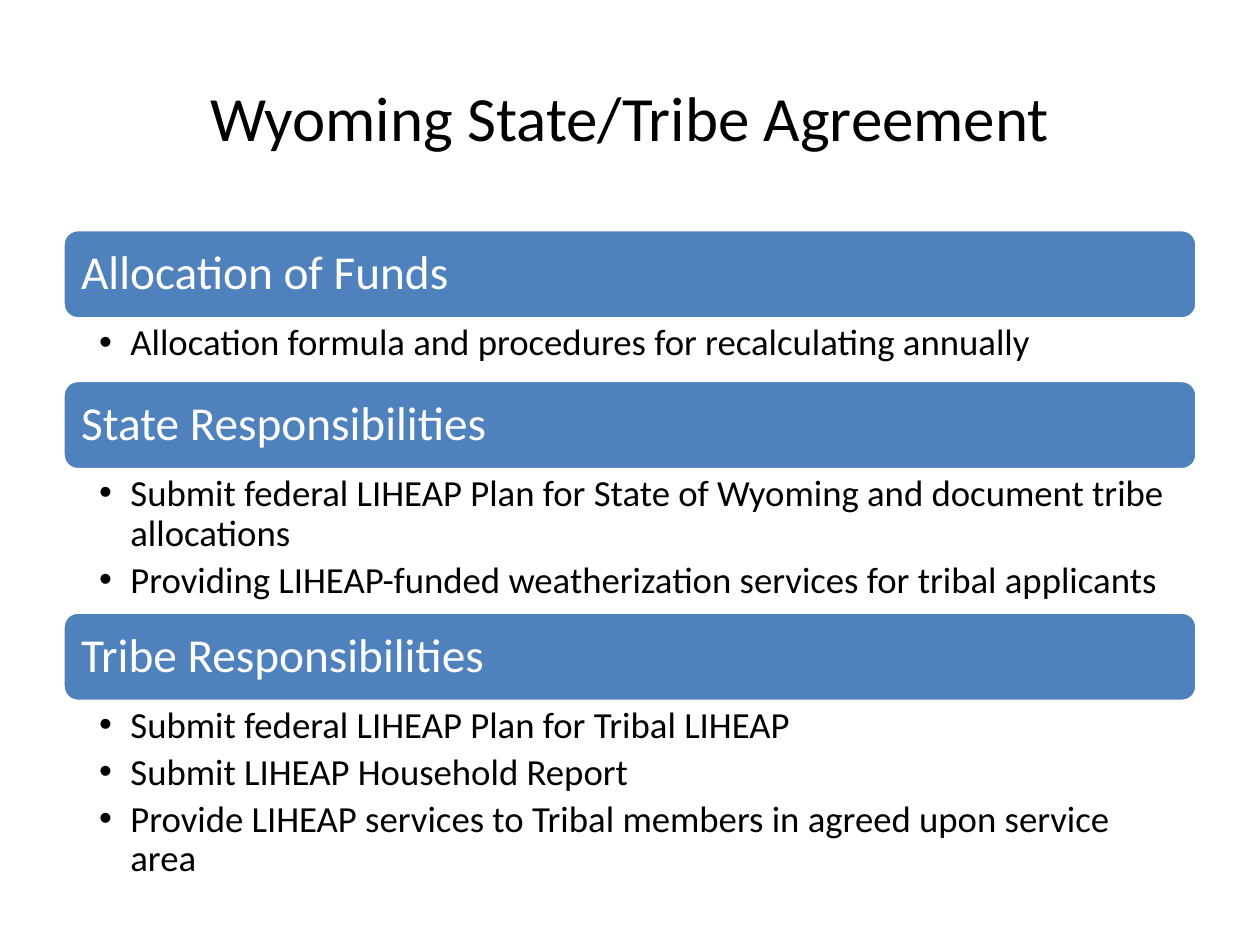
from lxml.etree import SubElement
from pptx import Presentation
from pptx.dml.color import RGBColor
from pptx.enum.shapes import MSO_SHAPE
from pptx.enum.text import MSO_ANCHOR, PP_ALIGN
from pptx.oxml.ns import qn
from pptx.util import Cm, Pt

COLORS = {"page": "FFFFFF", "band": "4F81BD", "light": "FFFFFF", "dark": "000000"}
FONT = "Calibri"
BAND_HEIGHT = 1.8

SECTIONS = [
    ("Allocation of Funds", 1.24, [
        "Allocation formula and procedures for recalculating annually",
    ]),
    ("State Responsibilities", 2.87, [
        "Submit federal LIHEAP Plan for State of Wyoming and document tribe allocations",
        "Providing LIHEAP-funded weatherization services for tribal applicants",
    ]),
    ("Tribe Responsibilities", 3.89, [
        "Submit federal LIHEAP Plan for Tribal LIHEAP",
        "Submit LIHEAP Household Report",
        "Provide LIHEAP services to Tribal members in agreed upon service area",
    ]),
]


def color(name):
    return RGBColor.from_string(COLORS[name])


def format_paragraph(paragraph, size, color_name, align=PP_ALIGN.LEFT):
    paragraph.alignment = align
    for run in paragraph.runs:
        run.font.name = FONT
        run.font.size = Pt(size)
        run.font.color.rgb = color(color_name)


def set_frame(frame, anchor, left, top, right, bottom):
    frame.word_wrap = True
    frame.vertical_anchor = anchor
    frame.margin_left, frame.margin_right = Cm(left), Cm(right)
    frame.margin_top, frame.margin_bottom = Cm(top), Cm(bottom)


def add_bullet(paragraph):
    properties = paragraph._p.get_or_add_pPr()
    properties.set("marL", str(Cm(0.63)))
    properties.set("indent", str(Cm(-0.63)))
    SubElement(properties, qn("a:buFont"), typeface="Arial")
    SubElement(properties, qn("a:buChar"), char="•")


def add_title(slide, left, top, width, height):
    title = slide.shapes.add_textbox(Cm(left), Cm(top), Cm(width), Cm(height))
    frame = title.text_frame
    set_frame(frame, MSO_ANCHOR.MIDDLE, 0.25, 0.13, 0.25, 0.13)
    frame.text = "Wyoming State/Tribe Agreement"
    format_paragraph(frame.paragraphs[0], 36, "dark", PP_ALIGN.CENTER)


def add_band(slide, heading, left, top, width, height):
    band = slide.shapes.add_shape(
        MSO_SHAPE.ROUNDED_RECTANGLE, Cm(left), Cm(top), Cm(width), Cm(height))
    band.shadow.inherit = False
    band.fill.solid()
    band.fill.fore_color.rgb = color("band")
    band.line.color.rgb = color("light")
    band.line.width = Pt(2)
    frame = band.text_frame
    set_frame(frame, MSO_ANCHOR.MIDDLE, 0.28, 0.28, 0.28, 0.28)
    frame.text = heading
    frame.paragraphs[0].line_spacing = 0.9
    format_paragraph(frame.paragraphs[0], 27, "light")


def add_points(slide, points, left, top, width, height):
    body = slide.shapes.add_textbox(Cm(left), Cm(top), Cm(width), Cm(height))
    frame = body.text_frame
    set_frame(frame, MSO_ANCHOR.TOP, 0.73, 0.1, 0.53, 0.1)
    frame.text = "\n".join(points)
    for point in frame.paragraphs:
        point.line_spacing = 0.9
        point.space_after = Pt(4.2)
        add_bullet(point)
        format_paragraph(point, 21, "dark")


def add_sections(slide, left, top, width):
    for heading, body_height, points in SECTIONS:
        add_band(slide, heading, left, top, width, BAND_HEIGHT)
        add_points(slide, points, left, top + BAND_HEIGHT, width, body_height)
        top += BAND_HEIGHT + body_height


def main():
    presentation = Presentation()
    presentation.slide_width, presentation.slide_height = Cm(25.4), Cm(19.05)
    slide = presentation.slides.add_slide(presentation.slide_layouts[6])
    slide.background.fill.solid()
    slide.background.fill.fore_color.rgb = color("page")
    add_title(slide, 1.27, 0.76, 22.86, 3.18)
    add_sections(slide, 1.27, 4.63, 22.86)
    presentation.save("out.pptx")


if __name__ == "__main__":
    main()
